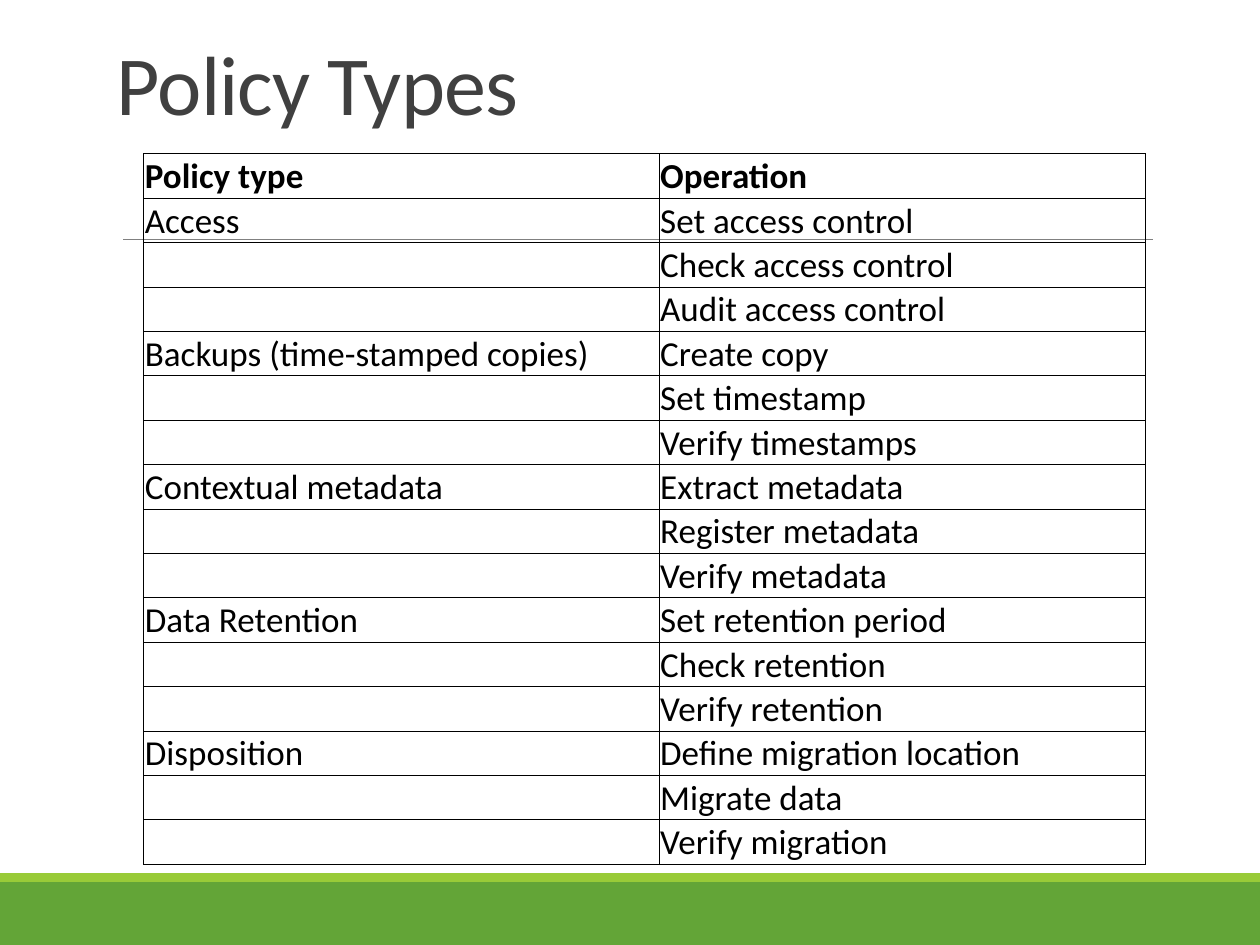
from lxml import etree
from pptx import Presentation
from pptx.dml.color import RGBColor
from pptx.enum.shapes import MSO_CONNECTOR, MSO_SHAPE
from pptx.enum.text import MSO_ANCHOR
from pptx.oxml.ns import qn
from pptx.util import Inches, Pt

BOTTOM = MSO_ANCHOR.BOTTOM
RECTANGLE = MSO_SHAPE.RECTANGLE
STRAIGHT = MSO_CONNECTOR.STRAIGHT

GREEN = RGBColor(0x63, 0xA5, 0x37)
LIME = RGBColor(0x99, 0xCB, 0x38)
GRAY = RGBColor(0x80, 0x80, 0x80)
CHARCOAL = RGBColor(0x40, 0x40, 0x40)
BLACK = RGBColor(0, 0, 0)
FONT = "Calibri"

# Content
TITLE = "Policy Types"
HEADINGS = ("Policy type", "Operation")
POLICIES = {
    "Access": ("Set access control", "Check access control", "Audit access control"),
    "Backups (time-stamped copies)": ("Create copy", "Set timestamp", "Verify timestamps"),
    "Contextual metadata": ("Extract metadata", "Register metadata", "Verify metadata"),
    "Data Retention": ("Set retention period", "Check retention", "Verify retention"),
    "Disposition": ("Define migration location", "Migrate data", "Verify migration"),
}

# Layout in inches
WIDTH, HEIGHT = 10, 7.5
BANDS = ((7, 0.5, GREEN), (6.93, 0.07, LIME))
RULE_LEFT, RULE_RIGHT, RULE_TOP = 0.98, 9.15, 1.9
TITLE_AREA = (0.83, 0.03, 8.27, 1.07)
TABLE_LEFT, TABLE_TOP, TABLE_HEIGHT = 1.14, 1.22, 5.64
COLUMN_WIDTHS = (4.09, 3.86)
CELL_MARGIN = 0.01


def write_text(frame, text, size, color, bold=False, tracking=None, line_spacing=None):
    para = frame.paragraphs[0]
    if line_spacing:
        para.line_spacing = line_spacing
    span = para.add_run()
    span.text = text
    span.font.name = FONT
    span.font.size = Pt(size)
    span.font.bold = bold
    span.font.color.rgb = color
    if tracking:
        span.font._element.set("spc", str(int(tracking * 100)))


def add_borders(cell, color, width):
    properties = cell._tc.get_or_add_tcPr()
    for side in ("lnL", "lnR", "lnT", "lnB"):
        line = etree.SubElement(properties, qn(f"a:{side}"), w=str(Pt(width)))
        fill = etree.SubElement(line, qn("a:solidFill"))
        etree.SubElement(fill, qn("a:srgbClr"), val=str(color))


def format_cell(cell):
    add_borders(cell, BLACK, 0.5)
    cell.fill.background()
    cell.vertical_anchor = BOTTOM
    cell.margin_left = cell.margin_right = cell.margin_top = Inches(CELL_MARGIN)
    cell.margin_bottom = 0


deck = Presentation()
deck.slide_width, deck.slide_height = Inches(WIDTH), Inches(HEIGHT)
page = deck.slides.add_slide(deck.slide_layouts[6])

# Footer bands
for top, height, color in BANDS:
    band = page.shapes.add_shape(RECTANGLE, 0, Inches(top), Inches(WIDTH), Inches(height))
    band.shadow.inherit = False
    band.fill.solid()
    band.fill.fore_color.rgb = color
    band.line.fill.background()

# Rule behind the table
rule = page.shapes.add_connector(
    STRAIGHT, Inches(RULE_LEFT), Inches(RULE_TOP), Inches(RULE_RIGHT), Inches(RULE_TOP))
rule.line.color.rgb = GRAY
rule.line.width = Pt(0.5)
etree.SubElement(rule._element.spPr, qn("a:effectLst"))

# Title
title_box = page.shapes.add_textbox(*map(Inches, TITLE_AREA))
title_box.text_frame.word_wrap = True
title_box.text_frame.vertical_anchor = BOTTOM
write_text(title_box.text_frame, TITLE, 48, CHARCOAL, tracking=-0.5, line_spacing=0.85)

# Policy table: each type is named only beside its first operation
rows = [HEADINGS]
for policy, operations in POLICIES.items():
    rows += [(policy if i == 0 else "", operation) for i, operation in enumerate(operations)]

table = page.shapes.add_table(
    len(rows), len(HEADINGS), Inches(TABLE_LEFT), Inches(TABLE_TOP),
    Inches(sum(COLUMN_WIDTHS)), Inches(TABLE_HEIGHT)).table
table.horz_banding = False
for column, width in zip(table.columns, COLUMN_WIDTHS):
    column.width = Inches(width)
for row_index, texts in enumerate(rows):
    for column_index, text in enumerate(texts):
        cell = table.cell(row_index, column_index)
        format_cell(cell)
        if text:
            write_text(cell.text_frame, text, 20, BLACK, bold=row_index == 0)

deck.save("out.pptx")
